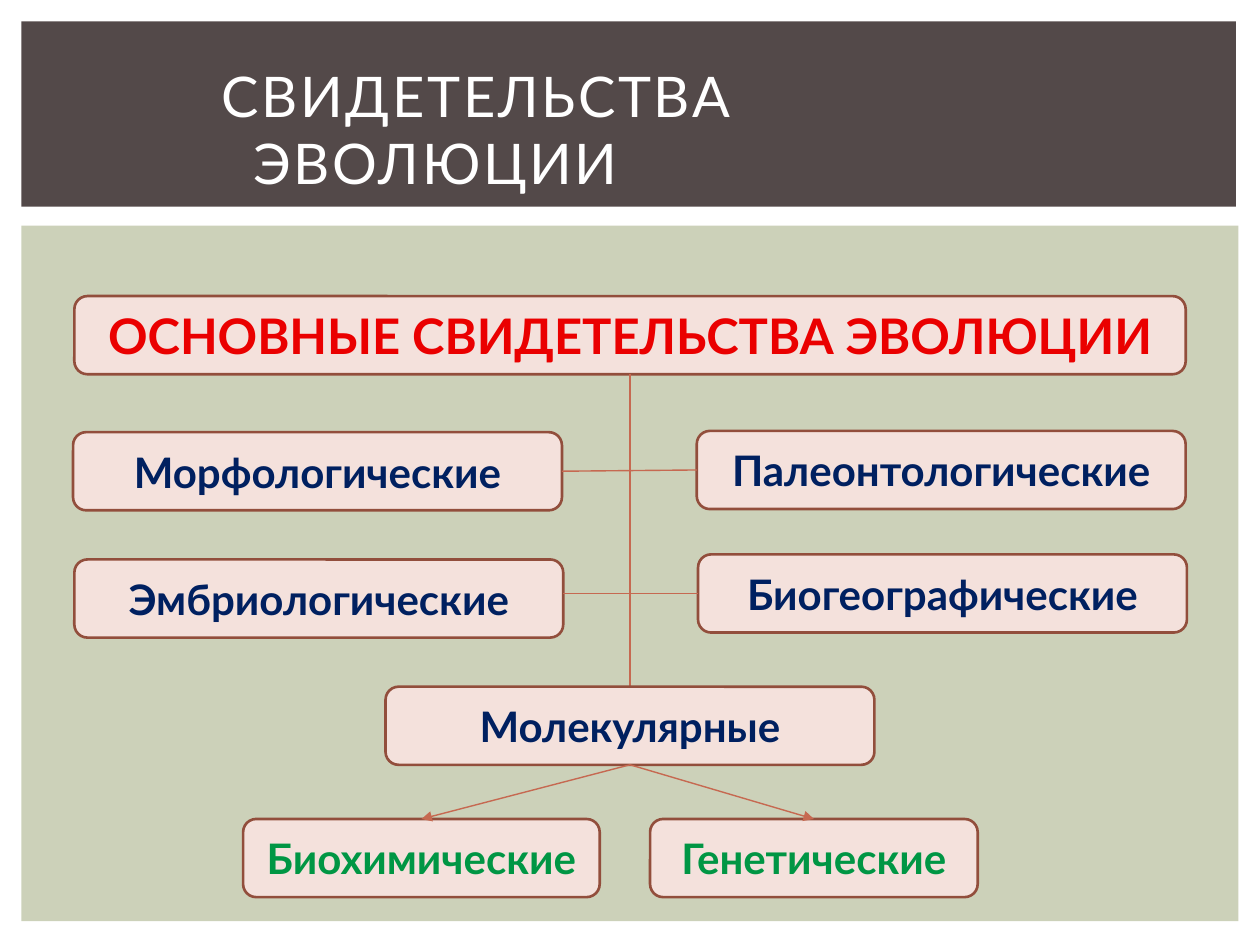
import pptx
import pptx.util
import pptx.dml.color
import pptx.enum.shapes
import pptx.enum.text
import pptx.oxml
import pptx.oxml.ns
from pptx.util import Inches

RGBColor = pptx.dml.color.RGBColor
Pt = pptx.util.Pt
SHAPE = pptx.enum.shapes.MSO_SHAPE
ANCHOR = pptx.enum.text.MSO_ANCHOR
ALIGN = pptx.enum.text.PP_ALIGN

SAGE = RGBColor(0xCC, 0xD1, 0xB9)
BROWN = RGBColor(0x53, 0x49, 0x49)
WHITE = RGBColor(0xFF, 0xFF, 0xFF)
PINK = RGBColor(0xF4, 0xE1, 0xDC)
RUST = RGBColor(0x92, 0x4E, 0x3C)
CORAL = RGBColor(0xC6, 0x69, 0x51)
RED = RGBColor(0xEA, 0x00, 0x00)
NAVY = RGBColor(0x00, 0x20, 0x60)
GREEN = RGBColor(0x00, 0x96, 0x44)

FONT = "Lato"
BOX_HEIGHT = 0.62
BRANCH_WIDTH = 3.88
TOP, LEFT, BOTTOM, RIGHT = range(4)  # connection sites


def format_run(r, size, color, bold=False):
    r.font.name = FONT
    r.font.size = Pt(size)
    r.font.bold = bold
    r.font.color.rgb = color


def add_panel(slide, left, top, width, height, color):
    sp = slide.shapes.add_shape(SHAPE.RECTANGLE, Inches(left), Inches(top),
                                Inches(width), Inches(height))
    sp.shadow.inherit = False
    sp.fill.solid()
    sp.fill.fore_color.rgb = color
    sp.line.fill.background()
    # Panels lie behind the title placeholder
    tree = slide.shapes.title.element.getparent()
    tree.remove(sp.element)
    slide.shapes.title.element.addprevious(sp.element)


def set_title(slide, text):
    sp = slide.shapes.title
    sp.left, sp.top = Inches(1.61), Inches(0.44)
    sp.width, sp.height = Inches(6.77), Inches(0.95)
    tf = sp.text_frame
    tf.text = text
    tf.word_wrap = True
    tf.auto_size = pptx.enum.text.MSO_AUTO_SIZE.NONE
    tf.vertical_anchor = ANCHOR.TOP
    p = tf.paragraphs[0]
    p.alignment = ALIGN.LEFT
    # Hanging indent
    pPr = p._p.get_or_add_pPr()
    pPr.set("marL", str(Inches(0.3)))
    pPr.set("indent", str(Inches(-0.25)))
    r = p.runs[0]
    format_run(r, 32, WHITE)
    r._r.get_or_add_rPr().set("spc", "150")


def add_box(slide, text, left, top, width=BRANCH_WIDTH, color=NAVY, size=24):
    sp = slide.shapes.add_shape(SHAPE.ROUNDED_RECTANGLE, Inches(left), Inches(top),
                                Inches(width), Inches(BOX_HEIGHT))
    sp.shadow.inherit = False
    sp.fill.solid()
    sp.fill.fore_color.rgb = PINK
    sp.line.color.rgb = RUST
    sp.line.width = Pt(1.5)
    tf = sp.text_frame
    tf.text = text
    tf.word_wrap = True
    tf.vertical_anchor = ANCHOR.MIDDLE
    p = tf.paragraphs[0]
    p.alignment = ALIGN.CENTER
    format_run(p.runs[0], size, color, bold=True)
    return sp


def add_line(slide, start, end, arrow=False):
    """Each end is a (shape, site) pair or an (x, y) point in inches."""
    def point(place):
        if isinstance(place[0], (int, float)):
            return Inches(place[0]), Inches(place[1])
        return 0, 0

    line = slide.shapes.add_connector(pptx.enum.shapes.MSO_CONNECTOR.STRAIGHT,
                                      *point(start), *point(end))
    for place, connect in ((start, line.begin_connect), (end, line.end_connect)):
        if not isinstance(place[0], (int, float)):
            connect(*place)
    line.line.color.rgb = CORAL
    line.line.width = Pt(0.79)
    if arrow:
        ln = line.line._get_or_add_ln()
        tail = pptx.oxml.parse_xml(
            f'<a:tailEnd {pptx.oxml.ns.nsdecls("a")} type="triangle"/>')
        ln.append(tail)
    line._element.spPr.append(
        pptx.oxml.parse_xml(f'<a:effectLst {pptx.oxml.ns.nsdecls("a")}/>'))


def main():
    prs = pptx.Presentation()
    prs.slide_width, prs.slide_height = Inches(10), Inches(7.5)
    slide = prs.slides.add_slide(prs.slide_layouts[5])

    # Background panels and title
    add_panel(slide, 0.17, 1.79, 9.66, 5.52, SAGE)
    add_panel(slide, 0.17, 0.17, 9.64, 1.47, BROWN)
    set_title(slide, "СВИДЕТЕЛЬСТВА ЭВОЛЮЦИИ")

    # Heading and the kinds of evidence
    heading = add_box(slide, "ОСНОВНЫЕ СВИДЕТЕЛЬСТВА ЭВОЛЮЦИИ",
                      0.59, 2.35, 8.82, RED, 28)
    biochemical = add_box(slide, "Биохимические", 1.93, 6.5, 2.83, GREEN)
    genetic = add_box(slide, "Генетические", 5.16, 6.5, 2.6, GREEN)
    morphological = add_box(slide, "Морфологические", 0.58, 3.43)
    add_box(slide, "Эмбриологические", 0.59, 4.44)
    paleontological = add_box(slide, "Палеонтологические", 5.53, 3.42)
    biogeographical = add_box(slide, "Биогеографические", 5.54, 4.4)

    # Trunk runs behind the molecular box
    add_line(slide, (heading, BOTTOM), (5, 5.74))
    add_line(slide, (4.47, 4.71), (biogeographical, LEFT))
    molecular = add_box(slide, "Молекулярные", 3.06, 5.45)

    # Branches
    for target in (biochemical, genetic):
        add_line(slide, (molecular, BOTTOM), (target, TOP), arrow=True)
    add_line(slide, (morphological, RIGHT), (paleontological, LEFT))

    prs.save("out.pptx")


if __name__ == "__main__":
    main()
